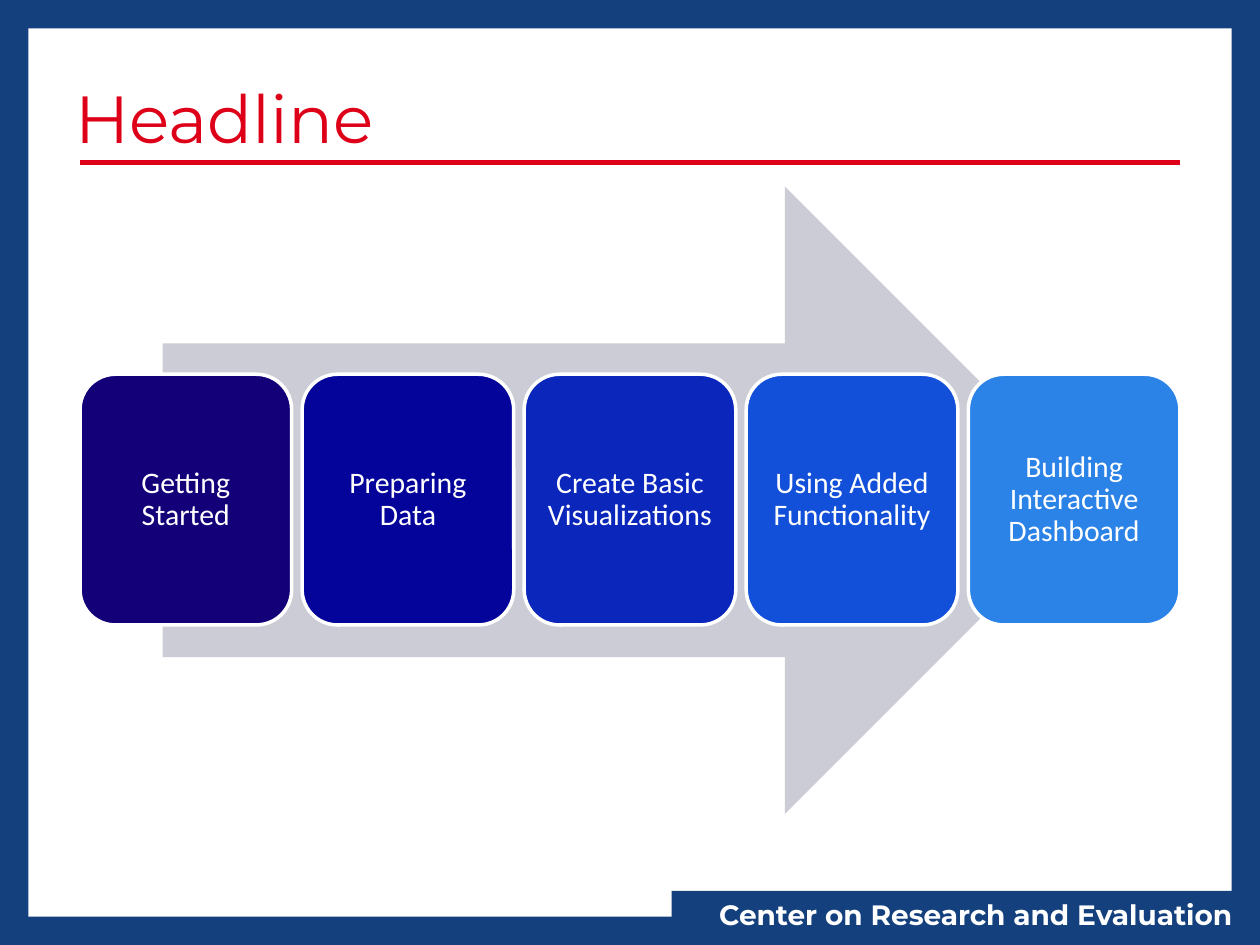
from dataclasses import dataclass

from lxml.etree import SubElement
from pptx import Presentation
from pptx.dml.color import RGBColor
from pptx.enum.shapes import MSO_CONNECTOR, MSO_SHAPE
from pptx.enum.text import MSO_ANCHOR, PP_ALIGN
from pptx.oxml.ns import qn
from pptx.util import Inches, Pt


@dataclass(frozen=True)
class Theme:
    """Colours, fonts and type sizes of the slide."""
    red: str = "DD0018"
    navy: str = "14417E"
    grey: str = "CCCCD7"
    white: str = "FFFFFF"
    steps: tuple = ("130079", "04049B", "0A26BB", "1250DA", "2B83E7")
    heading_font: str = "Montserrat"
    body_font: str = "Calibri"
    title_size: int = 38
    step_size: int = 17
    footer_size: int = 16


class SlideBuilder:
    """Draws styled elements on a grid of 100 columns by 75 rows."""

    columns, rows = 100, 75

    def __init__(self, presentation, theme):
        self.theme = theme
        self.width = presentation.slide_width
        self.height = presentation.slide_height
        self.slide = presentation.slides.add_slide(presentation.slide_layouts[6])

    def x(self, columns):
        """Convert columns to a length."""
        return round(columns * self.width / self.columns)

    def y(self, rows):
        """Convert rows to a length."""
        return round(rows * self.height / self.rows)

    def box(self, left, top, width, height):
        """Convert a grid box to lengths."""
        return self.x(left), self.y(top), self.x(width), self.y(height)

    def shape(self, kind, area, fill, outline=None):
        """Add a flat preset shape."""
        shape = self.slide.shapes.add_shape(kind, *self.box(*area))
        shape.shadow.inherit = False
        shape.fill.solid()
        shape.fill.fore_color.rgb = RGBColor.from_string(fill)
        if outline:
            shape.line.color.rgb = RGBColor.from_string(outline)
            shape.line.width = Pt(2)
        else:
            shape.line.fill.background()
        return shape

    def set_text(self, shape, text, font, size, color, align, bold=False):
        """Set the text of a shape as one styled paragraph."""
        frame = shape.text_frame
        frame.word_wrap = True
        frame.vertical_anchor = MSO_ANCHOR.MIDDLE
        paragraph = frame.paragraphs[0]
        paragraph.text = text
        paragraph.alignment = align
        paragraph.font.name = font
        paragraph.font.size = Pt(size)
        paragraph.font.bold = bold
        paragraph.font.color.rgb = RGBColor.from_string(color)
        return frame

    def title(self, text, area):
        """Add the slide title."""
        theme = self.theme
        shape = self.slide.shapes.add_textbox(*self.box(*area))
        self.set_text(shape, text, theme.heading_font, theme.title_size, theme.red, PP_ALIGN.LEFT)

    def rule(self, left, right, row):
        """Add a horizontal rule."""
        connector = self.slide.shapes.add_connector(
            MSO_CONNECTOR.STRAIGHT, self.x(left), self.y(row), self.x(right), self.y(row))
        connector.line.color.rgb = RGBColor.from_string(self.theme.red)
        connector.line.width = Pt(3)
        SubElement(connector._element.spPr, qn("a:effectLst"))

    def arrow(self, area):
        """Add the block arrow behind the steps."""
        self.shape(MSO_SHAPE.RIGHT_ARROW, area, self.theme.grey)

    def steps(self, labels, left, right, top, width, height):
        """Spread step cards evenly between two columns."""
        theme = self.theme
        pitch = (right - left - width) / (len(labels) - 1)
        for index, (label, fill) in enumerate(zip(labels, theme.steps)):
            area = (left + index * pitch, top, width, height)
            card = self.shape(MSO_SHAPE.ROUNDED_RECTANGLE, area, fill, theme.white)
            frame = self.set_text(card, label, theme.body_font, theme.step_size,
                                  theme.white, PP_ALIGN.CENTER)
            frame.paragraphs[0].line_spacing = 0.9
            frame.margin_left = frame.margin_right = Inches(0.07)
            frame.margin_top = frame.margin_bottom = Inches(0.07)

    def border(self, thickness):
        """Frame the slide with four bars."""
        for area in (
            (0, 0, self.columns, thickness),
            (0, self.rows - thickness, self.columns, thickness),
            (0, 0, thickness, self.rows),
            (self.columns - thickness, 0, thickness, self.rows),
        ):
            self.shape(MSO_SHAPE.RECTANGLE, area, self.theme.navy)

    def footer(self, text, area):
        """Add the footer label."""
        theme = self.theme
        label = self.shape(MSO_SHAPE.RECTANGLE, area, theme.navy)
        self.set_text(label, text, theme.heading_font, theme.footer_size,
                      theme.white, PP_ALIGN.RIGHT, bold=True)


def main():
    """Build and save the slide."""
    presentation = Presentation()
    presentation.slide_width, presentation.slide_height = Inches(10), Inches(7.5)
    builder = SlideBuilder(presentation, Theme())
    left, right = 6.35, 93.65
    builder.title("Headline", (5, 3, 90, 12.5))
    builder.rule(left, right, 12.9)
    builder.arrow((12.9, 14.8, 74.3, 49.8))
    labels = ("Getting Started", "Preparing Data", "Create Basic Visualizations",
              "Using Added Functionality", "Building Interactive Dashboard")
    builder.steps(labels, left, right, top=29.7, width=16.8, height=19.9)
    builder.border(2.25)
    builder.footer("Center on Research and Evaluation", (53.3, 70.7, 45.5, 3.7))
    presentation.save("out.pptx")


if __name__ == "__main__":
    main()
